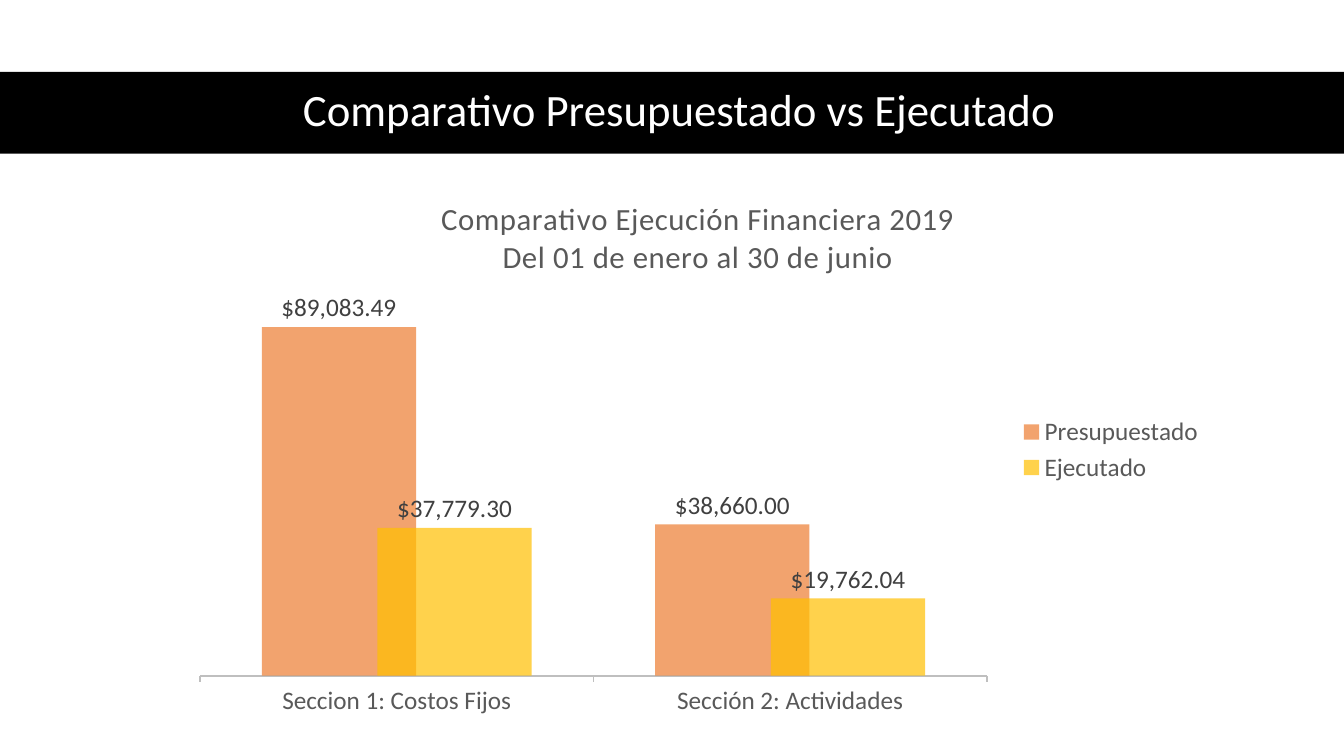
from dataclasses import dataclass

from lxml.etree import SubElement
from pptx import Presentation
from pptx.chart.chart import Chart
from pptx.chart.data import CategoryChartData
from pptx.dml.color import RGBColor
from pptx.enum.chart import XL_CHART_TYPE as ChartType
from pptx.enum.chart import XL_LABEL_POSITION as LabelPosition
from pptx.enum.chart import XL_LEGEND_POSITION as LegendPosition
from pptx.enum.chart import XL_TICK_LABEL_POSITION as TickLabels
from pptx.enum.chart import XL_TICK_MARK as TickMark
from pptx.enum.shapes import MSO_SHAPE as Preset
from pptx.enum.text import MSO_ANCHOR as Anchor
from pptx.enum.text import PP_ALIGN as Align
from pptx.oxml import parse_xml
from pptx.oxml.ns import nsdecls, qn
from pptx.slide import Slide
from pptx.util import Cm, Pt

BLACK = RGBColor(0x00, 0x00, 0x00)
WHITE = RGBColor(0xFF, 0xFF, 0xFF)
ORANGE = RGBColor(0xED, 0x7D, 0x31)
GOLD = RGBColor(0xFF, 0xC0, 0x00)
AXIS_GRAY = RGBColor(0xBF, 0xBF, 0xBF)
TEXT_GRAY = RGBColor(0x59, 0x59, 0x59)
LABEL_GRAY = RGBColor(0x40, 0x40, 0x40)

FONT = "Calibri"
MONEY = '"$"#,##0.00'
OPACITY = 70


@dataclass
class Series:
    name: str
    values: tuple[float, ...]
    color: RGBColor


CATEGORIES = ("Seccion 1: Costos Fijos", "Sección 2: Actividades")
SERIES = (
    Series("Presupuestado", (89083.49, 38660), ORANGE),
    Series("Ejecutado", (37779.3, 19762.04), GOLD),
)
CHART_TITLE = ("Comparativo Ejecución Financiera 2019", "Del 01 de enero al 30 de junio")


def set_font(font, size: float, color: RGBColor) -> None:
    font.name, font.size, font.bold = FONT, Pt(size), False
    font.color.rgb = color


def manual_layout(target: str, **places: float):
    """Layout in fractions of the chart area."""
    inner = '<c:layoutTarget val="inner"/>' if target == "plot" else ""
    modes = '<c:xMode val="edge"/><c:yMode val="edge"/>'
    values = "".join(f'<c:{key} val="{value}"/>' for key, value in places.items())
    return parse_xml(
        f"<c:layout {nsdecls('c')}><c:manualLayout>{inner}{modes}{values}"
        "</c:manualLayout></c:layout>"
    )


def replace_layout(parent, layout, position: int) -> None:
    for old in parent.findall(qn("c:layout")):
        parent.remove(old)
    parent.insert(position, layout)


def add_heading(page: Slide, text: str) -> None:
    band = page.shapes.add_shape(Preset.RECTANGLE, 0, Cm(1.81), Cm(33.87), Cm(2.06))
    band.shadow.inherit = False
    band.fill.solid()
    band.fill.fore_color.rgb = BLACK
    band.line.fill.background()

    box = page.shapes.add_textbox(Cm(1.55), Cm(1.78), Cm(31.14), Cm(2.06))
    frame = box.text_frame
    frame.word_wrap = True
    frame.vertical_anchor = Anchor.MIDDLE
    para = frame.paragraphs[0]
    para.text = text
    para.alignment = Align.CENTER
    para.line_spacing = 0.9
    set_font(para.font, 32, WHITE)


def style_title(chart: Chart) -> None:
    chart.has_title = True
    title = chart.chart_title
    frame = title.text_frame
    for index, line in enumerate(CHART_TITLE):
        para = frame.paragraphs[0] if index == 0 else frame.add_paragraph()
        span = para.add_run()
        span.text = line
        para.alignment = Align.CENTER
        for font in (para.font, span.font):
            set_font(font, 22, TEXT_GRAY)
        span.font._element.set("spc", "50")
    title.include_in_layout = False
    replace_layout(title._element, manual_layout("title", x=0.25, y=0.04), 1)


def style_axes(chart: Chart) -> None:
    category_axis = chart.category_axis
    category_axis.major_tick_mark = TickMark.OUTSIDE
    category_axis.format.line.color.rgb = AXIS_GRAY
    category_axis.format.line.width = Pt(1.25)
    set_font(category_axis.tick_labels.font, 18, TEXT_GRAY)

    value_axis = chart.value_axis
    value_axis.minimum_scale, value_axis.maximum_scale = 0, 100000
    value_axis.has_major_gridlines = False
    value_axis.tick_label_position = TickLabels.NONE
    value_axis.visible = False


def style_series(chart: Chart) -> None:
    plot = chart.plots[0]
    plot.gap_width, plot.overlap = 80, 25
    plot.vary_by_categories = False
    for bars, series in zip(plot.series, SERIES):
        bars.format.fill.solid()
        bars.format.fill.fore_color.rgb = series.color
        # Transparency
        color = bars._element.find(".//" + qn("a:srgbClr"))
        SubElement(color, qn("a:alpha")).set("val", str(OPACITY * 1000))
        labels = bars.data_labels
        labels.show_value = True
        labels.position = LabelPosition.OUTSIDE_END
        labels.number_format, labels.number_format_is_linked = MONEY, False
        set_font(labels.font, 18, LABEL_GRAY)


def add_comparison_chart(page: Slide) -> None:
    data = CategoryChartData(number_format=MONEY)
    data.categories = CATEGORIES
    for series in SERIES:
        data.add_series(series.name, series.values)
    chart = page.shapes.add_chart(
        ChartType.COLUMN_CLUSTERED, Cm(4.52), Cm(4.39), Cm(26.09), Cm(13.89), data
    ).chart
    set_font(chart.font, 18, BLACK)
    style_title(chart)
    style_axes(chart)
    style_series(chart)

    # Legend and plot area
    chart.has_legend = True
    chart.legend.position = LegendPosition.RIGHT
    chart.legend.include_in_layout = False
    set_font(chart.legend.font, 18, TEXT_GRAY)
    plot_area = chart._chartSpace.chart.plotArea
    replace_layout(plot_area, manual_layout("plot", x=0.02, y=0.2, w=0.76, h=0.71), 0)


def main() -> None:
    deck = Presentation()
    deck.slide_width, deck.slide_height = Cm(33.87), Cm(19.05)
    page = deck.slides.add_slide(deck.slide_layouts[6])
    add_heading(page, "Comparativo Presupuestado vs Ejecutado")
    add_comparison_chart(page)
    deck.save("out.pptx")


if __name__ == "__main__":
    main()
